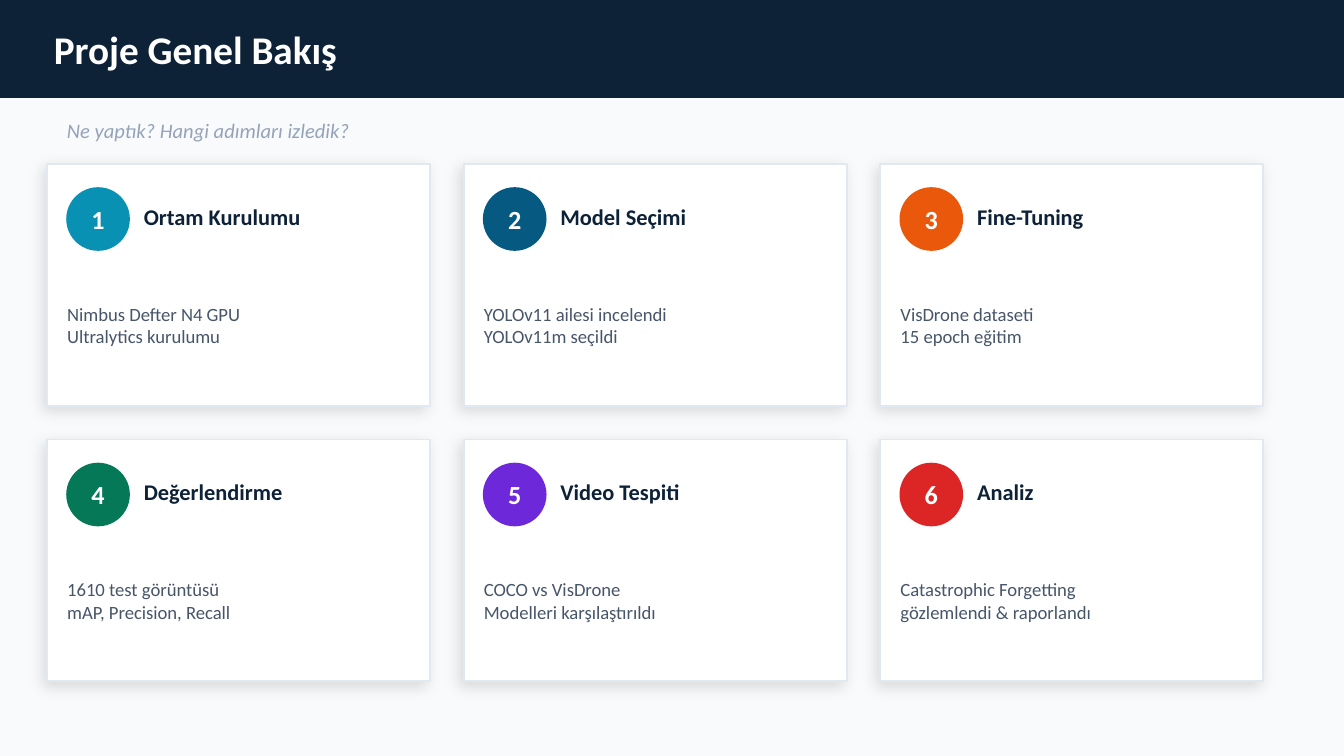
from pptx import Presentation
from pptx.dml.color import RGBColor
from pptx.enum.shapes import MSO_SHAPE as Shape
from pptx.enum.text import MSO_ANCHOR as Anchor, MSO_AUTO_SIZE as AutoSize, PP_ALIGN as Align
from pptx.oxml import parse_xml
from pptx.oxml.ns import nsdecls
from pptx.util import Emu, Pt

EMU_PER_PX = 4572
SLIDE_WIDTH, SLIDE_HEIGHT = 2000, 1125
MARGIN, HEADER_HEIGHT = 80, 144
NAVY, WHITE, BORDER, SLATE, MUTED = "0D2137", "FFFFFF", "E2E8F0", "475569", "94A3B8"
COLUMNS = 3
CARD_WIDTH, CARD_HEIGHT, CARD_GAP = 570, 360, 50
CARDS_LEFT, CARDS_TOP = 70, 244
CARD_PADDING, BADGE_SIZE = 30, 92
STEPS = [
    ("Ortam Kurulumu", "0891B2", ["Nimbus Defter N4 GPU", "Ultralytics kurulumu"]),
    ("Model Seçimi", "065A82", ["YOLOv11 ailesi incelendi", "YOLOv11m seçildi"]),
    ("Fine-Tuning", "EA580C", ["VisDrone dataseti", "15 epoch eğitim"]),
    ("Değerlendirme", "047857", ["1610 test görüntüsü", "mAP, Precision, Recall"]),
    ("Video Tespiti", "6D28D9", ["COCO vs VisDrone", "Modelleri karşılaştırıldı"]),
    ("Analiz", "DC2626", ["Catastrophic Forgetting", "gözlemlendi & raporlandı"]),
]


def px(value):
    return Emu(value * EMU_PER_PX)


def color(value):
    return RGBColor.from_string(value)


def write(frame, *lines, size, fill, font="Calibri", bold=False, italic=False,
          align=Align.LEFT, insets=(0, 0)):
    frame.word_wrap = True
    frame.auto_size = AutoSize.NONE
    frame.vertical_anchor = Anchor.MIDDLE
    frame.margin_left = frame.margin_right = px(insets[0])
    frame.margin_top = frame.margin_bottom = px(insets[1])
    for index, line in enumerate(lines):
        paragraph = frame.add_paragraph() if index else frame.paragraphs[0]
        paragraph.alignment = align
        run = paragraph.add_run()
        run.text = line
        run.font.name = font
        run.font.size = Pt(size)
        run.font.bold = bold
        run.font.italic = italic
        run.font.color.rgb = color(fill)


class SlideBuilder:
    def __init__(self, presentation, background):
        self.slide = presentation.slides.add_slide(presentation.slide_layouts[5])
        self.slide.background.fill.solid()
        self.slide.background.fill.fore_color.rgb = color(background)

    def shape(self, kind, left, top, width, height, fill, line=None):
        shape = self.slide.shapes.add_shape(kind, px(left), px(top), px(width), px(height))
        shape.shadow.inherit = False
        shape.fill.solid()
        shape.fill.fore_color.rgb = color(fill)
        shape.line.color.rgb = color(line or fill)
        shape.line.width = Pt(1)
        return shape

    def text(self, left, top, width, height, *lines, **style):
        box = self.slide.shapes.add_textbox(px(left), px(top), px(width), px(height))
        write(box.text_frame, *lines, **style)

    def header(self, title_text):
        band = self.shape(Shape.RECTANGLE, 0, 0, SLIDE_WIDTH, HEADER_HEIGHT, NAVY)
        title = self.slide.shapes.title
        title.left, title.top = px(MARGIN), px(0)
        title.width, title.height = px(SLIDE_WIDTH - 2 * MARGIN), px(HEADER_HEIGHT)
        write(title.text_frame, title_text, size=21, fill=WHITE, bold=True)
        title.element.addprevious(band.element)

    def soft_shadow(self, shape):
        effects = shape.element.spPr.find("{*}effectLst")
        effects.append(parse_xml(
            f'<a:outerShdw {nsdecls("a")} blurRad="{Pt(8)}" dist="{Pt(3)}" dir="{135 * 60000}"'
            ' algn="bl" rotWithShape="0"><a:srgbClr val="000000">'
            '<a:alpha val="12000"/></a:srgbClr></a:outerShdw>'))

    def badge(self, left, top, number, accent):
        area = (left, top, BADGE_SIZE, BADGE_SIZE)
        self.shape(Shape.OVAL, *area, accent)
        self.text(*area, str(number), size=14, fill=WHITE, bold=True, align=Align.CENTER)

    def card(self, left, top, number, heading, accent, lines):
        panel = self.shape(Shape.RECTANGLE, left, top, CARD_WIDTH, CARD_HEIGHT, WHITE, BORDER)
        self.soft_shadow(panel)
        self.badge(left + CARD_PADDING, top + 36, number, accent)
        self.text(left + 144, top + 40, 400, 76, heading, size=12, fill=NAVY, bold=True)
        self.text(left + CARD_PADDING, top + 150, CARD_WIDTH - 2 * CARD_PADDING, 180,
                  *lines, size=10, fill=SLATE)


def main():
    presentation = Presentation()
    presentation.slide_width, presentation.slide_height = px(SLIDE_WIDTH), px(SLIDE_HEIGHT)
    builder = SlideBuilder(presentation, "F8FAFC")
    builder.header("Proje Genel Bakış")
    builder.text(MARGIN, 164, SLIDE_WIDTH - 2 * MARGIN, 60, "Ne yaptık? Hangi adımları izledik?",
                 size=11, fill=MUTED, italic=True, insets=(20, 10))
    for index, (heading, accent, lines) in enumerate(STEPS):
        row, column = divmod(index, COLUMNS)
        builder.card(CARDS_LEFT + column * (CARD_WIDTH + CARD_GAP),
                     CARDS_TOP + row * (CARD_HEIGHT + CARD_GAP),
                     index + 1, heading, accent, lines)
    presentation.save("out.pptx")


if __name__ == "__main__":
    main()
